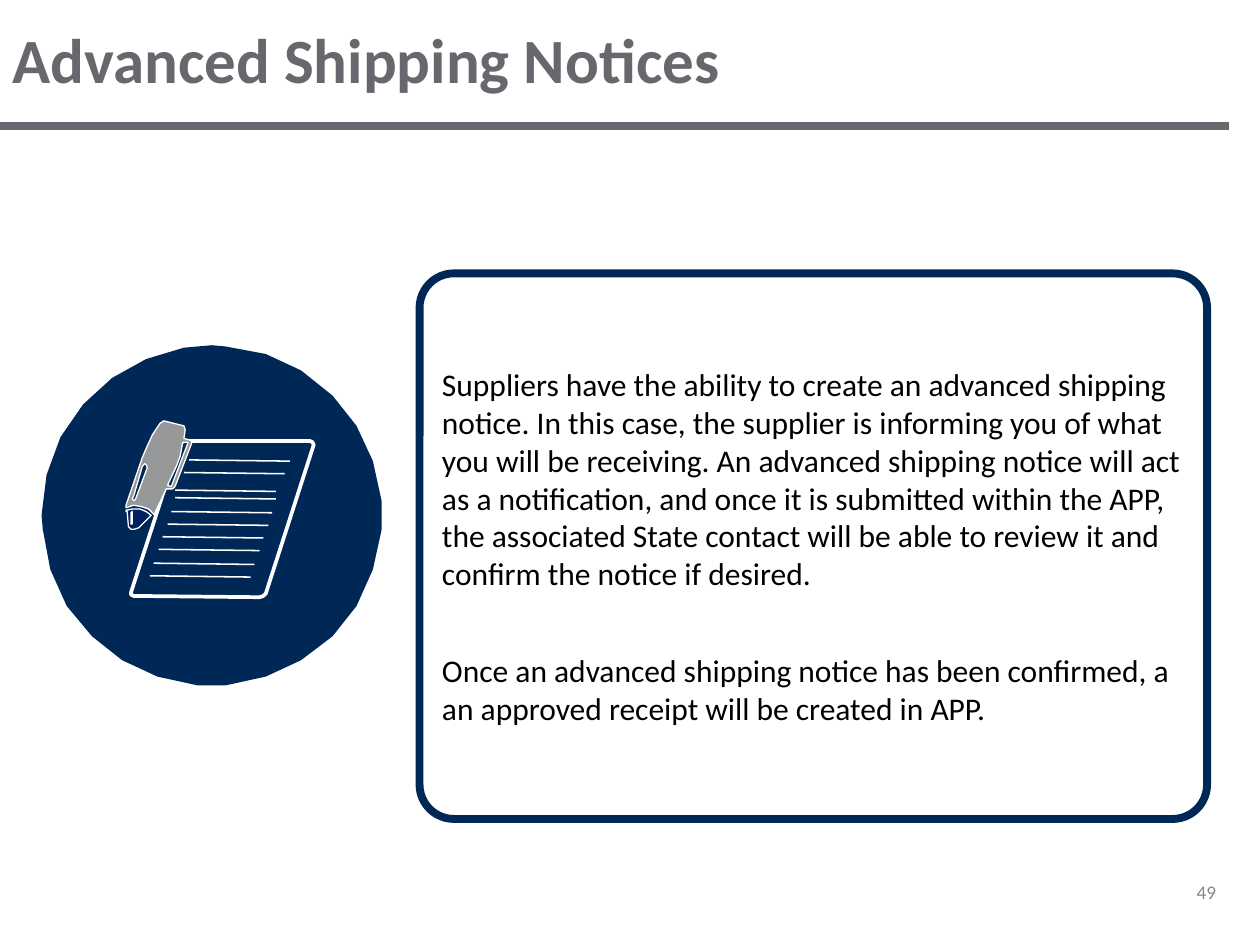
from dataclasses import dataclass
from lxml.etree import SubElement
from pptx import Presentation
from pptx.dml.color import RGBColor
from pptx.enum.shapes import MSO_CONNECTOR, MSO_SHAPE
from pptx.enum.text import MSO_ANCHOR, MSO_AUTO_SIZE, PP_ALIGN
from pptx.oxml.ns import qn
from pptx.util import Pt

PX = 9144  # EMU per px, 100 px to the inch


@dataclass(frozen=True)
class Theme:
    font: str = "Calibri"
    gray: str = "69676D"
    navy: str = "002857"
    nib: str = "002060"
    pen: str = "97989A"
    white: str = "FFFFFF"
    black: str = "000000"
    muted: str = "888888"
    title_size: int = 36
    body_size: int = 18
    number_size: int = 11


THEME = Theme()

BODY = [
    "Suppliers have the ability to create an advanced shipping notice. In this case, "
    "the supplier is informing you of what you will be receiving. An advanced shipping "
    "notice will act as a notification, and once it is submitted within the APP, the "
    "associated State contact will be able to review it and confirm the notice if desired.",
    "Once an advanced shipping notice has been confirmed, a an approved receipt will be "
    "created in APP.",
]

# Icon outlines in px
DISC = [(168, 274), (146, 276), (116, 285), (89, 300), (66, 321), (48, 347), (37, 377),
        (33, 409), (34, 420), (40, 452), (53, 481), (73, 505), (97, 524), (125, 537),
        (157, 544), (179, 544), (211, 537), (239, 524), (264, 505), (283, 481), (296, 452),
        (303, 420), (303, 398), (296, 366), (283, 338), (264, 314), (239, 294), (211, 281),
        (179, 275)]
SHEET = [(211, 471), (209, 473), (206, 474), (106, 473), (104, 472), (104, 470), (142, 353),
         (144, 351), (147, 350), (246, 350), (248, 351), (249, 353)]
RULE_STARTS = [(150, 365), (146, 375), (139, 389), (139, 395), (136, 406), (133, 416),
               (129, 426), (126, 436), (122, 447), (119, 457)]
RULE_LENGTH = 80
PEN_BODY = [(116, 356), (113, 363), (100, 401), (100, 403), (106, 401), (112, 402), (118, 404),
            (123, 409), (123, 407), (132, 388), (134, 388), (137, 388), (139, 386), (152, 352),
            (152, 350), (150, 349), (146, 348), (147, 341), (146, 338), (130, 334), (127, 336),
            (121, 345)]
PEN_CLIP = [(133, 385), (140, 370), (143, 362), (145, 351), (149, 351), (149, 352), (136, 386),
            (135, 386)]
PEN_SLOT = [(115, 368), (116, 369), (117, 371), (108, 395), (107, 397), (106, 397), (105, 396),
            (106, 394), (113, 370)]
NIB = [(100, 405), (100, 406), (101, 406), (102, 418), (104, 420), (107, 420), (110, 419),
       (119, 410), (120, 409), (116, 406), (111, 404), (105, 404)]
NIB_GLINT = [(104, 407), (105, 406), (105, 415), (105, 416), (104, 416)]


def px(*lengths):
    return [length * PX for length in lengths]


def color(value):
    return RGBColor.from_string(value)


def format_text(frame, size, ink, bold=False, align=PP_ALIGN.LEFT):
    frame.word_wrap = True
    frame.auto_size = MSO_AUTO_SIZE.NONE
    frame.vertical_anchor = MSO_ANCHOR.MIDDLE
    for para in frame.paragraphs:
        para.alignment = align
        for span in para.runs:
            span.font.name = THEME.font
            span.font.size = Pt(size)
            span.font.bold = bold
            span.font.color.rgb = color(ink)


def style_shape(shape, fill=None, line=None, width=0):
    shape.shadow.inherit = False
    if fill:
        shape.fill.solid()
        shape.fill.fore_color.rgb = color(fill)
    else:
        shape.fill.background()
    if line:
        shape.line.color.rgb = color(line)
        shape.line.width = Pt(width)
    else:
        shape.line.fill.background()


def add_outline(shapes, contours, **style):
    first, *others = contours
    builder = shapes.build_freeform(*first[0], scale=PX)
    builder.add_line_segments(first[1:], close=True)
    for contour in others:
        builder.move_to(*contour[0])
        builder.add_line_segments(contour[1:], close=True)
    style_shape(builder.convert_to_shape(), **style)


def add_line(shapes, start, end, ink, width):
    line = shapes.add_connector(MSO_CONNECTOR.STRAIGHT, *px(*start, *end))
    line.line.color.rgb = color(ink)
    line.line.width = Pt(width)
    SubElement(line._element.spPr, qn("a:effectLst"))


def add_title(page, text):
    title = page.shapes.title
    title.left, title.top, title.width, title.height = px(0, 0, 1000, 92)
    title.text_frame.text = text
    format_text(title.text_frame, THEME.title_size, THEME.gray, bold=True)


def add_page_number(page, text):
    box = page.shapes.add_textbox(*px(717, 688, 258, 40))
    box.text_frame.text = text
    format_text(box.text_frame, THEME.number_size, THEME.muted, align=PP_ALIGN.RIGHT)


def add_message(page, paragraphs):
    box = page.shapes.add_shape(MSO_SHAPE.ROUNDED_RECTANGLE, *px(333, 217, 625, 433))
    box.adjustments[0] = 0.063
    style_shape(box, line=THEME.navy, width=4.5)
    frame = box.text_frame
    frame.text = paragraphs[0]
    for text in paragraphs[1:]:
        para = frame.add_paragraph()
        para.text = text
        para.space_before = Pt(34)
    format_text(frame, THEME.body_size, THEME.black)


def add_icon(page):
    add_outline(page.shapes, [DISC], fill=THEME.navy)
    icon = page.shapes.add_group_shape().shapes
    # Ruled sheet
    add_outline(icon, [SHEET], line=THEME.white, width=2.12)
    for x, y in RULE_STARTS:
        add_line(icon, (x, y), (x + RULE_LENGTH, y + 1), THEME.white, 0.87)
    # Pen
    add_outline(icon, [PEN_BODY, PEN_CLIP, PEN_SLOT],
                fill=THEME.pen, line=THEME.white, width=0.75)
    add_outline(icon, [NIB, NIB_GLINT], fill=THEME.nib, line=THEME.white, width=0.75)


def main():
    deck = Presentation()
    deck.slide_width, deck.slide_height = px(1000, 750)
    page = deck.slides.add_slide(deck.slide_layouts[5])
    # Header
    add_line(page.shapes, (0, 100), (975, 100), THEME.gray, 5)
    add_title(page, "Advanced Shipping Notices")
    # Content
    add_page_number(page, "49")
    add_message(page, BODY)
    add_icon(page)
    deck.save("out.pptx")


if __name__ == "__main__":
    main()
